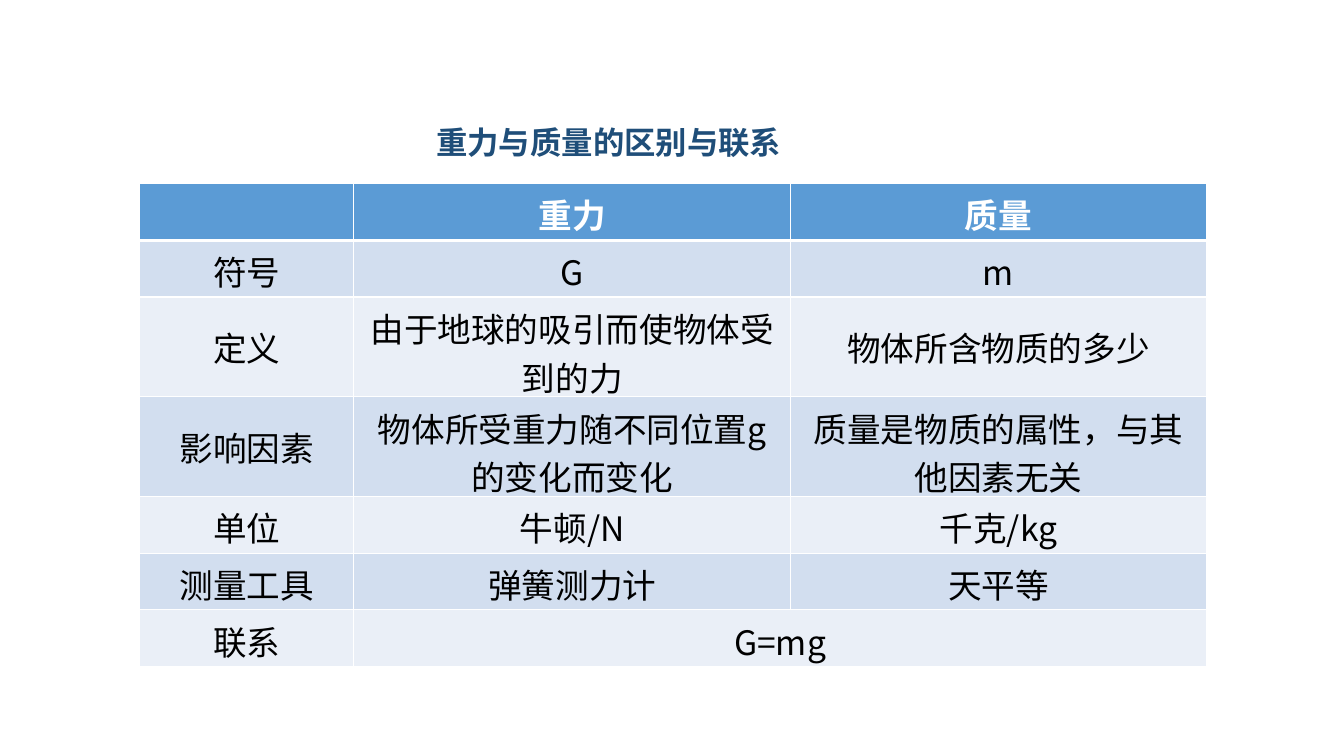
import dataclasses

import pptx
import pptx.dml.color
import pptx.enum.text
import pptx.oxml
import pptx.oxml.ns
import pptx.util

PX = 9525  # EMU per px, 96 px to the inch
ANCHOR = pptx.enum.text.MSO_ANCHOR
ALIGN = pptx.enum.text.PP_ALIGN


@dataclasses.dataclass(frozen=True)
class Theme:
    font: str = "Noto Sans CJK SC"
    title_size: int = 28
    table_size: int = 24
    title: str = "1F4E79"
    header: str = "5B9BD5"
    bands: tuple = ("D2DEEF", "EAEFF7")
    text: str = "000000"
    white: str = "FFFFFF"
    rule: int = 1
    header_rule: int = 3


def rgb(value):
    return pptx.dml.color.RGBColor.from_string(value)


def write(frame, text, *, font, size, color, bold=False, small_caps=False,
          align=ALIGN.LEFT, spacing=None):
    """Put one formatted paragraph into a text frame."""
    paragraph = frame.paragraphs[0]
    paragraph.alignment = align
    paragraph.line_spacing = spacing
    run = paragraph.add_run()
    run.text = text
    run.font.name = font
    run.font.size = pptx.util.Pt(size)
    run.font.bold = bold
    run.font.color.rgb = rgb(color)
    properties = run.font._element
    east_asian = pptx.oxml.parse_xml(
        f'<a:ea {pptx.oxml.ns.nsdecls("a")} typeface="{font}"/>')
    properties.find(pptx.oxml.ns.qn("a:latin")).addnext(east_asian)
    if small_caps:
        properties.set("cap", "small")


class SlideBuilder:
    def __init__(self, slide, theme):
        self.slide = slide
        self.theme = theme

    def title(self, text, left, top, width, height):
        box = self.slide.shapes.add_textbox(
            left * PX, top * PX, width * PX, height * PX)
        frame = box.text_frame
        frame.word_wrap = True
        frame.vertical_anchor = ANCHOR.BOTTOM
        write(frame, text, font=self.theme.font, size=self.theme.title_size,
              color=self.theme.title, bold=True, small_caps=True, spacing=1.5)

    def borders(self, cell, **widths):
        properties = cell._tc.get_or_add_tcPr()
        for side in "LRTB":
            width = pptx.util.Pt(widths.get(side, self.theme.rule))
            properties.append(pptx.oxml.parse_xml(
                f'<a:ln{side} {pptx.oxml.ns.nsdecls("a")} w="{width}">'
                f'<a:solidFill><a:srgbClr val="{self.theme.white}"/>'
                f'</a:solidFill></a:ln{side}>'))

    def cell(self, cell, text, row):
        theme = self.theme
        is_header = row == 0
        # The heavy rule lies between the header and the first body row
        heavy_side = {0: "B", 1: "T"}.get(row)
        self.borders(cell, **({heavy_side: theme.header_rule} if heavy_side else {}))
        cell.fill.solid()
        cell.fill.fore_color.rgb = rgb(
            theme.header if is_header else theme.bands[(row - 1) % 2])
        cell.margin_left = cell.margin_right = 12 * PX
        cell.margin_top = cell.margin_bottom = 6 * PX
        cell.vertical_anchor = ANCHOR.TOP if is_header else ANCHOR.MIDDLE
        if text:
            write(cell.text_frame, text, font=theme.font, size=theme.table_size,
                  color=theme.white if is_header else theme.text,
                  bold=is_header, align=ALIGN.CENTER)

    def table(self, rows, left, top, widths, heights):
        table = self.slide.shapes.add_table(
            len(rows), len(widths), left * PX, top * PX,
            sum(widths) * PX, sum(heights) * PX).table
        for column, width in zip(table.columns, widths):
            column.width = width * PX
        for index, (texts, height) in enumerate(zip(rows, heights)):
            table.rows[index].height = height * PX
            for column, text in enumerate(texts):
                self.cell(table.cell(index, column), text, index)
        return table


COMPARISON = [
    ("", "重力", "质量"),
    ("符号", "G", "m"),
    ("定义", "由于地球的吸引而使物体受到的力", "物体所含物质的多少"),
    ("影响因素", "物体所受重力随不同位置g的变化而变化", "质量是物质的属性，与其他因素无关"),
    ("单位", "牛顿/N", "千克/kg"),
    ("测量工具", "弹簧测力计", "天平等"),
    ("联系", "G=mg", ""),
]


def main():
    deck = pptx.Presentation()
    deck.slide_width, deck.slide_height = 1280 * PX, 720 * PX
    builder = SlideBuilder(deck.slides.add_slide(deck.slide_layouts[6]), Theme())

    # Heading
    builder.title("重力与质量的区别与联系", 406, 103, 501, 56)

    # Comparison table, with the relation shared by both quantities
    single_line, double_line = 54, 95
    heights = [double_line if row[0] in ("定义", "影响因素") else single_line
               for row in COMPARISON]
    comparison = builder.table(COMPARISON, 133, 175, (204, 416, 396), heights)
    relation = len(COMPARISON) - 1
    comparison.cell(relation, 1).merge(comparison.cell(relation, 2))

    deck.save("out.pptx")


if __name__ == "__main__":
    main()
